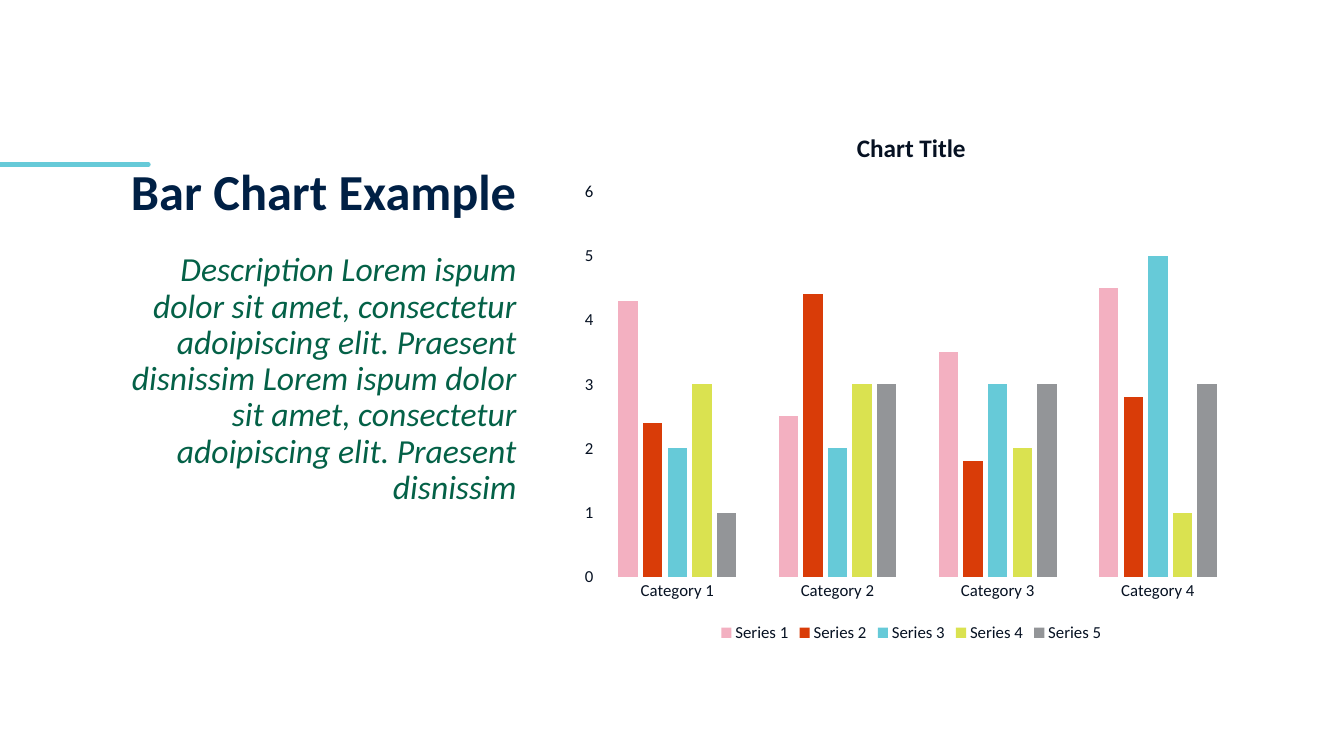
from pptx import Presentation
from pptx.chart.data import CategoryChartData
from pptx.dml.color import RGBColor
from pptx.enum.chart import XL_CHART_TYPE as ChartType
from pptx.enum.chart import XL_LEGEND_POSITION as LegendPosition
from pptx.enum.chart import XL_TICK_MARK as TickMark
from pptx.enum.shapes import MSO_CONNECTOR as Connector
from pptx.enum.text import MSO_ANCHOR as Anchor
from pptx.enum.text import PP_ALIGN as Align
from pptx.oxml.ns import qn
from pptx.util import Pt
from lxml import etree

FONT = "Calibri"
WHITE = RGBColor(0xFF, 0xFF, 0xFF)
INK = RGBColor(0x06, 0x11, 0x22)
NAVY = RGBColor(0x00, 0x20, 0x45)
GREEN = RGBColor(0x04, 0x61, 0x47)
PINK = RGBColor(0xF3, 0xB0, 0xC1)
ORANGE = RGBColor(0xD9, 0x3C, 0x08)
AQUA = RGBColor(0x66, 0xCA, 0xD8)
LIME = RGBColor(0xDA, 0xE2, 0x50)
GREY = RGBColor(0x93, 0x95, 0x98)

DESCRIPTION = (
    "Description Lorem ispum dolor sit amet, consectetur adoipiscing elit. "
    "Praesent disnissim Lorem ispum dolor sit amet, consectetur adoipiscing "
    "elit. Praesent disnissim"
)
CATEGORIES = ["Category 1", "Category 2", "Category 3", "Category 4"]
SERIES = [
    ("Series 1", (4.3, 2.5, 3.5, 4.5), PINK),
    ("Series 2", (2.4, 4.4, 1.8, 2.8), ORANGE),
    ("Series 3", (2, 2, 3, 5), AQUA),
    ("Series 4", (3, 3, 2, 1), LIME),
    ("Series 5", (1, 3, 3, 3), GREY),
]


def style_font(font, size, color, bold=False, italic=False):
    """Set the typeface, size, colour and emphasis of a font."""
    font.name = FONT
    font.size = Pt(size)
    font.color.rgb = color
    font.bold = bold
    font.italic = italic


def add_accent(slide, left, top, width):
    """Draw the round-ended accent rule."""
    accent = slide.shapes.add_connector(
        Connector.STRAIGHT, Pt(left), Pt(top), Pt(left + width), Pt(top)
    )
    accent.line.color.rgb = AQUA
    accent.line.width = Pt(3.25)
    accent.line._get_or_add_ln().set("cap", "rnd")
    etree.SubElement(accent._element.spPr, qn("a:effectLst"))


def add_copy(slide, left, top, width, height, wording, anchor, **style):
    """Add one right-aligned paragraph in the given box."""
    frame = slide.shapes.add_textbox(
        Pt(left), Pt(top), Pt(width), Pt(height)
    ).text_frame
    frame.word_wrap = True
    frame.vertical_anchor = anchor
    paragraph = frame.paragraphs[0]
    paragraph.alignment = Align.RIGHT
    paragraph.line_spacing = 0.9
    run = paragraph.add_run()
    run.text = wording
    style_font(run.font, **style)


def add_text_column(slide, left, top, width, height):
    """Stack the heading above the description."""
    heading_height = 126
    body_top = 141
    add_copy(slide, left, top, width, heading_height, "Bar Chart Example",
             Anchor.BOTTOM, size=36, color=NAVY, bold=True)
    add_copy(slide, left, top + body_top, width, height - body_top,
             DESCRIPTION, Anchor.TOP, size=24, color=GREEN, italic=True)


def add_bar_chart(slide, left, top, width, height):
    """Add the clustered columns with title, axes and legend."""
    chart_data = CategoryChartData()
    chart_data.categories = CATEGORIES
    for name, values, _ in SERIES:
        chart_data.add_series(name, values)
    chart = slide.shapes.add_chart(
        ChartType.COLUMN_CLUSTERED,
        Pt(left), Pt(top), Pt(width), Pt(height), chart_data,
    ).chart
    style_font(chart.font, 10, INK)

    chart.has_title = True
    title_run = chart.chart_title.text_frame.paragraphs[0].add_run()
    title_run.text = "Chart Title"
    style_font(title_run.font, 18, INK, bold=True)
    chart.chart_title.include_in_layout = False

    chart.has_legend = True
    chart.legend.position = LegendPosition.BOTTOM
    chart.legend.include_in_layout = False
    style_font(chart.legend.font, 12, INK)

    for axis in (chart.category_axis, chart.value_axis):
        axis.major_tick_mark = TickMark.NONE
        axis.minor_tick_mark = TickMark.NONE
        style_font(axis.tick_labels.font, 12, INK)
    chart.category_axis.format.line.color.rgb = WHITE
    chart.category_axis.format.line.width = Pt(0.75)
    value_axis = chart.value_axis
    value_axis.minimum_scale = 0
    value_axis.maximum_scale = 6
    value_axis.major_unit = 1
    value_axis.format.line.fill.background()
    value_axis.major_gridlines.format.line.color.rgb = WHITE
    value_axis.major_gridlines.format.line.width = Pt(0.75)

    plot = chart.plots[0]
    plot.vary_by_categories = False
    plot.gap_width = 219
    plot.overlap = -27
    for series, (_, _, color) in zip(plot.series, SERIES):
        series.format.fill.solid()
        series.format.fill.fore_color.rgb = color
        series.invert_if_negative = False


def main():
    """Build the bar chart slide and save it."""
    deck = Presentation()
    deck.slide_width = Pt(960)
    deck.slide_height = Pt(540)
    slide = deck.slides.add_slide(deck.slide_layouts[6])
    slide.background.fill.solid()
    slide.background.fill.fore_color.rgb = WHITE
    add_accent(slide, 0, 117.5, 106)
    add_bar_chart(slide, 408, 78, 486, 384)
    add_text_column(slide, 66, 36, 310, 426)
    deck.save("out.pptx")


if __name__ == "__main__":
    main()
